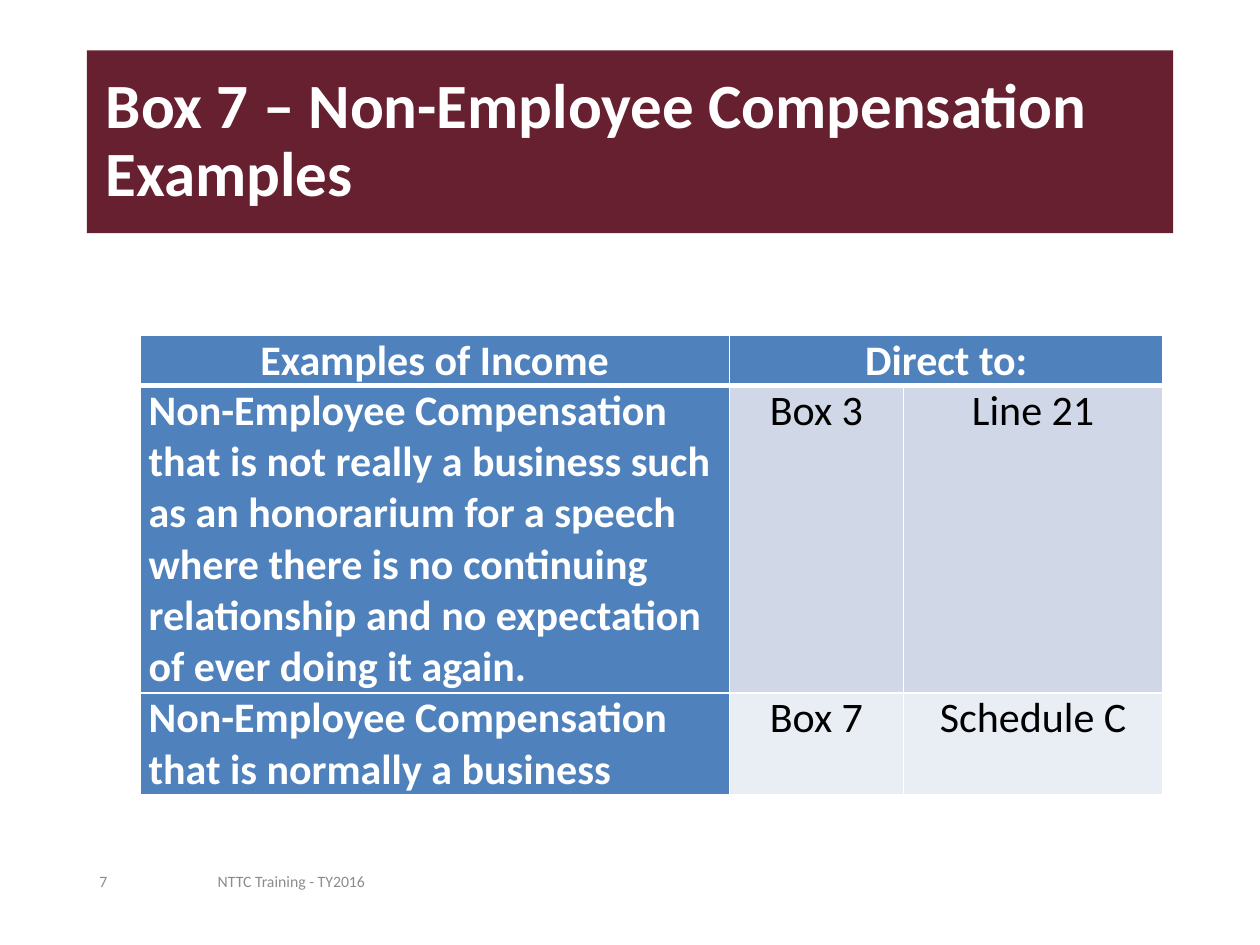
from lxml.etree import SubElement
from pptx import Presentation
from pptx.dml.color import RGBColor
from pptx.enum.text import MSO_ANCHOR, MSO_AUTO_SIZE, PP_ALIGN
from pptx.oxml import parse_xml
from pptx.oxml.ns import nsdecls
from pptx.util import Inches, Pt

FONT = "Calibri"
MAROON = RGBColor(0x67, 0x20, 0x2F)
BLUE = RGBColor(0x4F, 0x81, 0xBD)
BAND_DARK = RGBColor(0xD0, 0xD8, 0xE8)
BAND_LIGHT = RGBColor(0xE9, 0xED, 0xF4)
WHITE = RGBColor(0xFF, 0xFF, 0xFF)
BLACK = RGBColor(0x00, 0x00, 0x00)
GRAY = RGBColor(0x8C, 0x8C, 0x8C)

COLUMN_WIDTHS = (4.68, 1.38, 2.06)
ROW_HEIGHTS = (0.4, 2.44, 0.81)
BAND_FILLS = (BLUE, BAND_DARK, BAND_LIGHT)
INCOME_ROWS = (
    ("Examples of Income", "Direct to:", ""),
    ("Non-Employee Compensation that is not really a business such as an "
     "honorarium for a speech where there is no continuing relationship and "
     "no expectation of ever doing it again.", "Box 3", "Line 21"),
    ("Non-Employee Compensation that is normally a business",
     "Box 7", "Schedule C"),
)


def add_text(paragraph, text, size, color, bold=False):
    """Append one formatted run to a paragraph."""
    run = paragraph.add_run()
    run.text = text
    run.font.name = FONT
    run.font.size = Pt(size)
    run.font.bold = bold
    run.font.color.rgb = color


def place_title(slide, left, top, width, height):
    """Turn the title placeholder into the maroon banner."""
    banner = slide.shapes.title
    banner.left, banner.top = Inches(left), Inches(top)
    banner.width, banner.height = Inches(width), Inches(height)
    banner.fill.solid()
    banner.fill.fore_color.rgb = MAROON
    frame = banner.text_frame
    frame.word_wrap = True
    frame.auto_size = MSO_AUTO_SIZE.NONE
    frame.vertical_anchor = MSO_ANCHOR.MIDDLE
    heading = frame.paragraphs[0]
    heading.alignment = PP_ALIGN.LEFT
    heading.line_spacing = 0.9
    properties = heading._p.get_or_add_pPr()
    properties.set("marL", str(Inches(0.05)))
    properties.set("indent", "0")
    add_text(heading, "Box 7 – Non-Employee Compensation Examples", 36, WHITE, True)


def set_borders(cell, bottom_width):
    """Draw white borders around a cell, with a chosen bottom width."""
    properties = cell._tc.get_or_add_tcPr()
    for position, side in enumerate("LRTB"):
        width = bottom_width if side == "B" else 1
        line = parse_xml(f'<a:ln{side} {nsdecls("a")} w="{Pt(width)}"/>')
        namespace = line.nsmap["a"]
        fill = SubElement(line, f"{{{namespace}}}solidFill")
        SubElement(fill, f"{{{namespace}}}srgbClr", val=str(WHITE))
        properties.insert(position, line)


def place_income_table(slide, left, top, width, height):
    """Build the table that directs each kind of income."""
    table = slide.shapes.add_table(
        len(ROW_HEIGHTS), len(COLUMN_WIDTHS),
        Inches(left), Inches(top), Inches(width), Inches(height)).table
    for column, column_width in zip(table.columns, COLUMN_WIDTHS):
        column.width = Inches(column_width)
    for row, row_height in zip(table.rows, ROW_HEIGHTS):
        row.height = Inches(row_height)
    table.cell(0, 1).merge(table.cell(0, 2))
    for r, entries in enumerate(INCOME_ROWS):
        for c, entry in enumerate(entries):
            cell = table.cell(r, c)
            is_heading = r == 0 or c == 0
            cell.margin_left = cell.margin_right = Inches(0.07)
            cell.margin_top = cell.margin_bottom = 0
            cell.fill.solid()
            cell.fill.fore_color.rgb = BLUE if is_heading else BAND_FILLS[r]
            set_borders(cell, 3 if r == 0 else 1)
            if entry:
                paragraph = cell.text_frame.paragraphs[0]
                paragraph.alignment = PP_ALIGN.LEFT if r and c == 0 else PP_ALIGN.CENTER
                add_text(paragraph, entry, 24, WHITE if is_heading else BLACK, is_heading)


def place_footer_text(slide, text, left, top, width, height):
    """Add one small gray footer entry."""
    frame = slide.shapes.add_textbox(
        Inches(left), Inches(top), Inches(width), Inches(height)).text_frame
    frame.word_wrap = True
    frame.vertical_anchor = MSO_ANCHOR.MIDDLE
    add_text(frame.paragraphs[0], text, 9, GRAY)


def main():
    """Build and save the presentation."""
    presentation = Presentation()
    presentation.slide_width = Inches(10)
    presentation.slide_height = Inches(7.5)
    slide = presentation.slides.add_slide(presentation.slide_layouts[5])
    place_title(slide, 0.69, 0.4, 8.62, 1.45)
    place_footer_text(slide, "NTTC Training - TY2016", 1.63, 6.79, 3.77, 0.4)
    place_footer_text(slide, "7", 0.69, 6.79, 0.7, 0.4)
    place_income_table(slide, 1.11, 2.66, sum(COLUMN_WIDTHS), sum(ROW_HEIGHTS))
    presentation.save("out.pptx")


if __name__ == "__main__":
    main()
